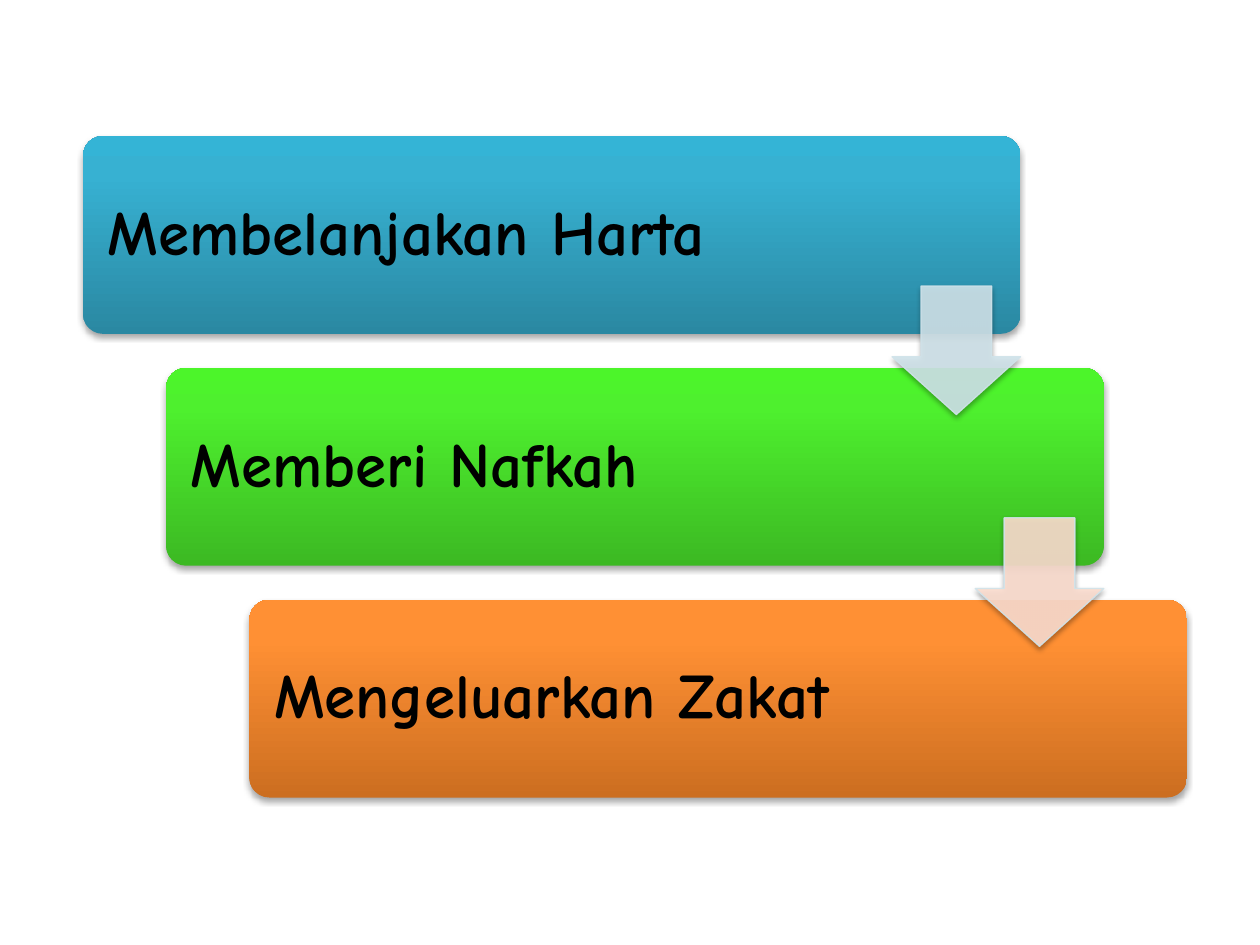
from dataclasses import dataclass

from lxml import etree
from pptx import Presentation
from pptx.dml.color import RGBColor
from pptx.enum import shapes, text
from pptx.oxml import ns
from pptx.util import Inches, Pt


@dataclass(frozen=True)
class Theme:
    font: str = "Comic Neue"
    size: int = 36
    ink: str = "000000"
    edge: str = "D0E3EA"
    blue: tuple = ("2A88A2", "37B1D2", "34B4D6")
    green: tuple = ("3CB923", "4EF02E", "4CF52A")
    orange: tuple = ("CC6E20", "FF9034", "FF9136")
    arrows: tuple = ("D0E3EA", "FCDDCF")
    stops: tuple = (0, 80, 100)
    alpha: int = 90


def add(parent, tag, **attrs):
    return etree.SubElement(parent, ns.qn(tag), {k: str(v) for k, v in attrs.items()})


def tint(parent, color, alpha):
    add(add(parent, "a:srgbClr", val=color), "a:alpha", val=alpha * 1000)


class Deck:
    def __init__(self, theme):
        self.theme = theme
        self.prs = Presentation()
        self.prs.slide_width, self.prs.slide_height = Inches(10), Inches(7.5)
        self.slide = self.prs.slides.add_slide(self.prs.slide_layouts[6])

    def shape(self, kind, box, adjust):
        item = self.slide.shapes.add_shape(kind, *map(Inches, box))
        for i, value in enumerate(adjust):
            item.adjustments[i] = value
        self.shade(item)
        return item

    def shade(self, item):
        """Give the shape a soft shadow straight below it."""
        item.shadow.inherit = False
        effects = item._element.spPr.find(ns.qn("a:effectLst"))
        drop = add(effects, "a:outerShdw", blurRad=Pt(3.1), dist=Pt(1.8),
                   dir=5400000, rotWithShape=0)
        tint(drop, self.theme.ink, 35)

    def bar(self, box, words, colors):
        item = self.shape(shapes.MSO_SHAPE.ROUNDED_RECTANGLE, box, [0.1])
        item.line.fill.background()
        item.fill.gradient()
        item.fill.gradient_angle = 90
        stops = item._element.spPr.find(".//" + ns.qn("a:gsLst"))
        for old in list(stops):
            stops.remove(old)
        for pos, color in zip(self.theme.stops, colors):
            add(add(stops, "a:gs", pos=pos * 1000), "a:srgbClr", val=color)
        self.label(item.text_frame, words)

    def label(self, frame, words):
        frame.word_wrap = True
        frame.vertical_anchor = text.MSO_ANCHOR.MIDDLE
        frame.margin_left = frame.margin_right = Inches(0.15)
        frame.margin_top = frame.margin_bottom = Inches(0.15)
        para = frame.paragraphs[0]
        para.alignment = text.PP_ALIGN.LEFT
        para.line_spacing = 0.9
        run = para.add_run()
        run.text = words
        run.font.name = self.theme.font
        run.font.size = Pt(self.theme.size)
        run.font.bold = True
        run.font.color.rgb = RGBColor.from_string(self.theme.ink)

    def arrow(self, box, color):
        item = self.shape(shapes.MSO_SHAPE.DOWN_ARROW, box, [0.55, 0.45])
        item.line.width = Pt(0.75)
        for fill, hue in ((item.fill, color), (item.line.fill, self.theme.edge)):
            fill.solid()
            fill.fore_color.rgb = RGBColor.from_string(hue)
        for tone in item._element.spPr.findall(".//" + ns.qn("a:solidFill")):
            add(tone[0], "a:alpha", val=self.theme.alpha * 1000)


def main():
    theme = Theme()
    deck = Deck(theme)
    across, down = 0.66, 1.84
    steps = [
        ("Membelanjakan Harta", theme.blue),
        ("Memberi Nafkah", theme.green),
        ("Mengeluarkan Zakat", theme.orange),
    ]
    for i, (words, colors) in enumerate(steps):
        deck.bar((0.66 + i * across, 1.08 + i * down, 7.44, 1.57), words, colors)
    for i, color in enumerate(theme.arrows):
        deck.arrow((7.08 + i * across, 2.27 + i * down, 1.02, 1.02), color)
    deck.prs.save("out.pptx")


if __name__ == "__main__":
    main()
